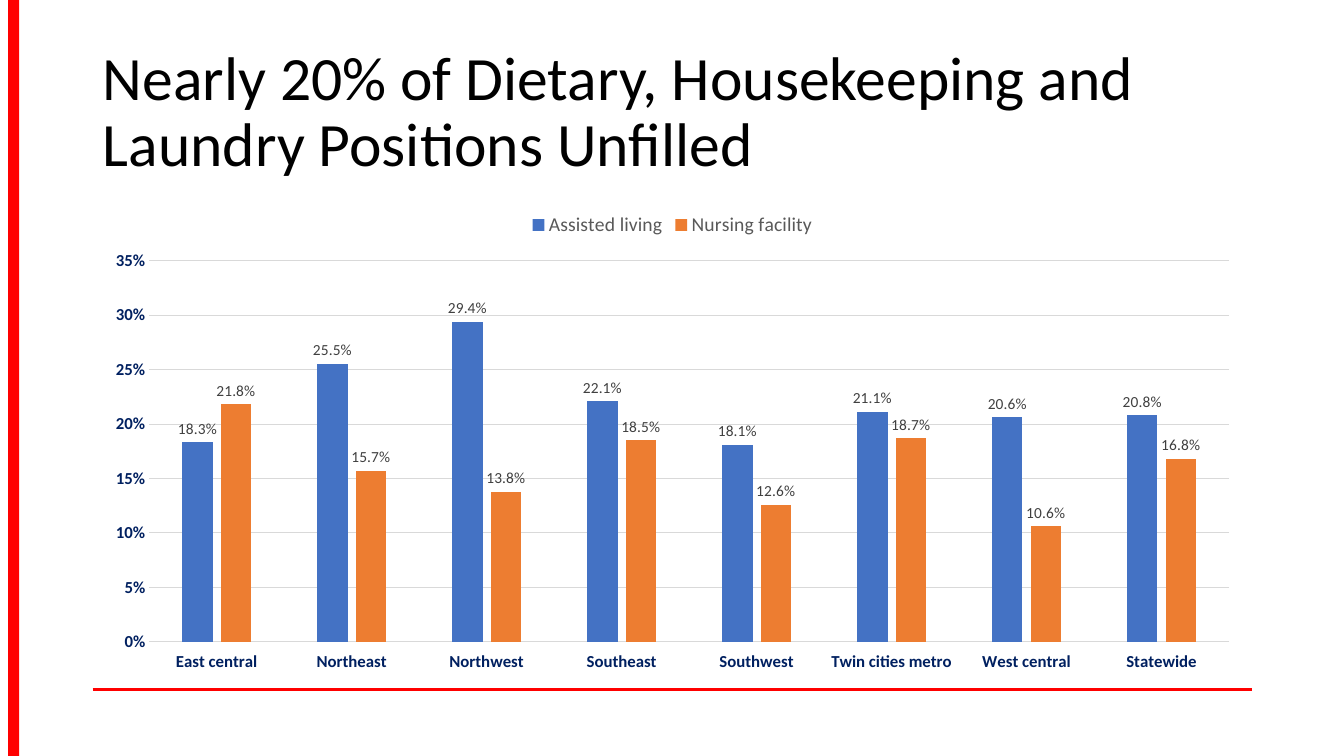
"""Build the slide on unfilled dietary, housekeeping and laundry positions."""
from pptx import Presentation
from pptx.chart.data import CategoryChartData as Data
from pptx.dml.color import RGBColor as Rgb
from pptx.enum.chart import XL_CHART_TYPE as Kind, XL_LABEL_POSITION as Spot
from pptx.enum.chart import XL_LEGEND_POSITION as Side, XL_TICK_LABEL_POSITION as Low
from pptx.enum.chart import XL_TICK_MARK as Tick
from pptx.enum.shapes import MSO_CONNECTOR as Link, MSO_SHAPE as Form
from pptx.enum.text import MSO_ANCHOR as Anchor, PP_ALIGN as Align
from pptx.oxml.ns import qn
from pptx.util import Pt
from lxml.etree import SubElement

PX = 9144
HUES = {
    "red": "FF0000", "black": "000000", "navy": "002060", "grid": "D9D9D9",
    "key": "595959", "label": "404040", "blue": "4472C4", "orange": "ED7D31",
}
AREAS = ["East central", "Northeast", "Northwest", "Southeast", "Southwest",
         "Twin cities metro", "West central", "Statewide"]
RATES = [
    ("Assisted living", "blue",
     [0.183, 0.255, 0.294, 0.221, 0.181, 0.211, 0.206, 0.208]),
    ("Nursing facility", "orange",
     [0.218, 0.157, 0.138, 0.185, 0.126, 0.187, 0.106, 0.168]),
]


def px(*nums):
    return [num * PX for num in nums]


def style(font, size, hue, bold=False):
    font.name, font.size, font.bold = "Calibri", Pt(size), bold
    font.color.rgb = Rgb.from_string(HUES[hue])


deck = Presentation()
deck.slide_width, deck.slide_height = px(1333, 750)
slide = deck.slides.add_slide(deck.slide_layouts[5])
shapes = slide.shapes

rule = shapes.add_connector(Link.STRAIGHT, *px(92, 684, 1242, 684))
rule.line.color.rgb = Rgb.from_string(HUES["red"])
rule.line.width = Pt(2)
SubElement(rule._element.spPr, qn("a:effectLst"))

band = shapes.add_shape(Form.RECTANGLE, *px(8, 0, 11, 750))
band.shadow.inherit = False
band.fill.solid()
band.fill.fore_color.rgb = Rgb.from_string(HUES["red"])
band.line.fill.background()

title = shapes.title
title.left, title.top, title.width, title.height = px(92, 40, 1150, 145)
frame = title.text_frame
frame.text = "Nearly 20% of Dietary, Housekeeping and Laundry Positions Unfilled"
frame.word_wrap = True
frame.vertical_anchor = Anchor.MIDDLE
para = frame.paragraphs[0]
para.alignment = Align.LEFT
para.line_spacing = 0.9
style(para.runs[0].font, 44, "black")

data = Data(number_format="0.0%")
data.categories = AREAS
for name, hue, rates in RATES:
    data.add_series(name, rates)
chart = shapes.add_chart(Kind.COLUMN_CLUSTERED, *px(92, 200, 1150, 476), data).chart
style(chart.font, 10, "black")
chart.has_title = False
chart.has_legend = True
chart.legend.position = Side.TOP
chart.legend.include_in_layout = False
style(chart.legend.font, 14, "key")

plot = chart.plots[0]
plot.gap_width, plot.overlap = 219, -27
plot.vary_by_categories = False
for bars, (name, hue, rates) in zip(plot.series, RATES):
    bars.format.fill.solid()
    bars.format.fill.fore_color.rgb = Rgb.from_string(HUES[hue])
    bars.invert_if_negative = False
    tags = bars.data_labels
    tags.show_value = True
    tags.position = Spot.OUTSIDE_END
    tags.number_format, tags.number_format_is_linked = "0.0%", False
    style(tags.font, 11, "label")

across, up = chart.category_axis, chart.value_axis
for axis in (across, up):
    axis.major_tick_mark = axis.minor_tick_mark = Tick.NONE
    style(axis.tick_labels.font, 12, "navy", True)
across.tick_label_position = Low.LOW
up.minimum_scale, up.maximum_scale, up.major_unit = 0, 0.35, 0.05
up.tick_labels.number_format = "0%"
up.tick_labels.number_format_is_linked = False
up.has_major_gridlines = True
up.format.line.fill.background()
for line in (across.format.line, up.major_gridlines.format.line):
    line.color.rgb = Rgb.from_string(HUES["grid"])
    line.width = Pt(0.75)

deck.save("out.pptx")
